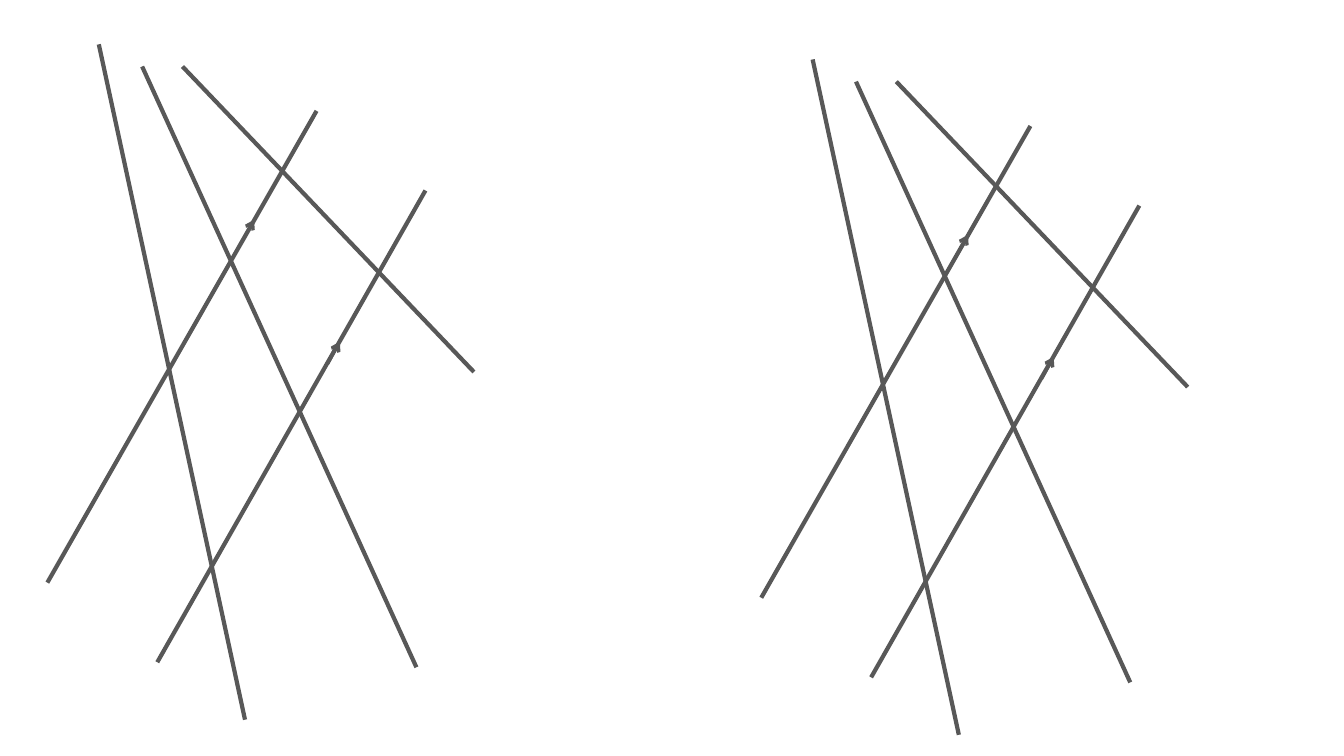
from lxml import etree
from pptx import Presentation
from pptx.dml.color import RGBColor
from pptx.enum.shapes import MSO_CONNECTOR
from pptx.oxml.ns import qn
from pptx.util import Pt

STRAIGHT = MSO_CONNECTOR.STRAIGHT
SCALE = 9144
GREY = "585858"
SHIFTS = [(708, 15), (0, 0)]
LINES = [
    (243, 714, 98, 44),
    (413, 662, 141, 66),
    (470, 369, 181, 66),
    (47, 578, 314, 110),
    (156, 657, 422, 189),
]
MARKS = [(325, 361), (240, 240)]
RUN, RISE = 12, 22


def px(count):
    """Turn px into EMU."""
    return count * SCALE


def paint(code):
    """Turn a hex string into a colour."""
    return RGBColor.from_string(code)


def draw_line(group, ends, shift, width=3, arrow=False):
    """Draw a straight line, with an arrowhead at its end if asked."""
    x1, y1, x2, y2 = ends
    dx, dy = shift
    line = group.shapes.add_connector(
        STRAIGHT, px(x1 + dx), px(y1 + dy), px(x2 + dx), px(y2 + dy)
    )
    line.line.color.rgb = paint(GREY)
    line.line.width = Pt(width)
    props = line.line._get_or_add_ln()
    if arrow:
        etree.SubElement(props, qn("a:tailEnd"), type="arrow")
    etree.SubElement(props.getparent(), qn("a:effectLst"))


def draw_set(slide, shift):
    """Draw three crossing lines over two marked parallels."""
    group = slide.shapes.add_group_shape()
    for ends in LINES:
        draw_line(group, ends, shift)
    for x, y in MARKS:
        ends = (x, y, x + RUN, y - RISE)
        draw_line(group, ends, shift, width=2.25, arrow=True)


def main():
    """Build the slide and save it."""
    deck = Presentation()
    deck.slide_width = px(1333)
    deck.slide_height = px(750)
    slide = deck.slides.add_slide(deck.slide_layouts[6])
    for shift in SHIFTS:
        draw_set(slide, shift)
    deck.save("out.pptx")


if __name__ == "__main__":
    main()
